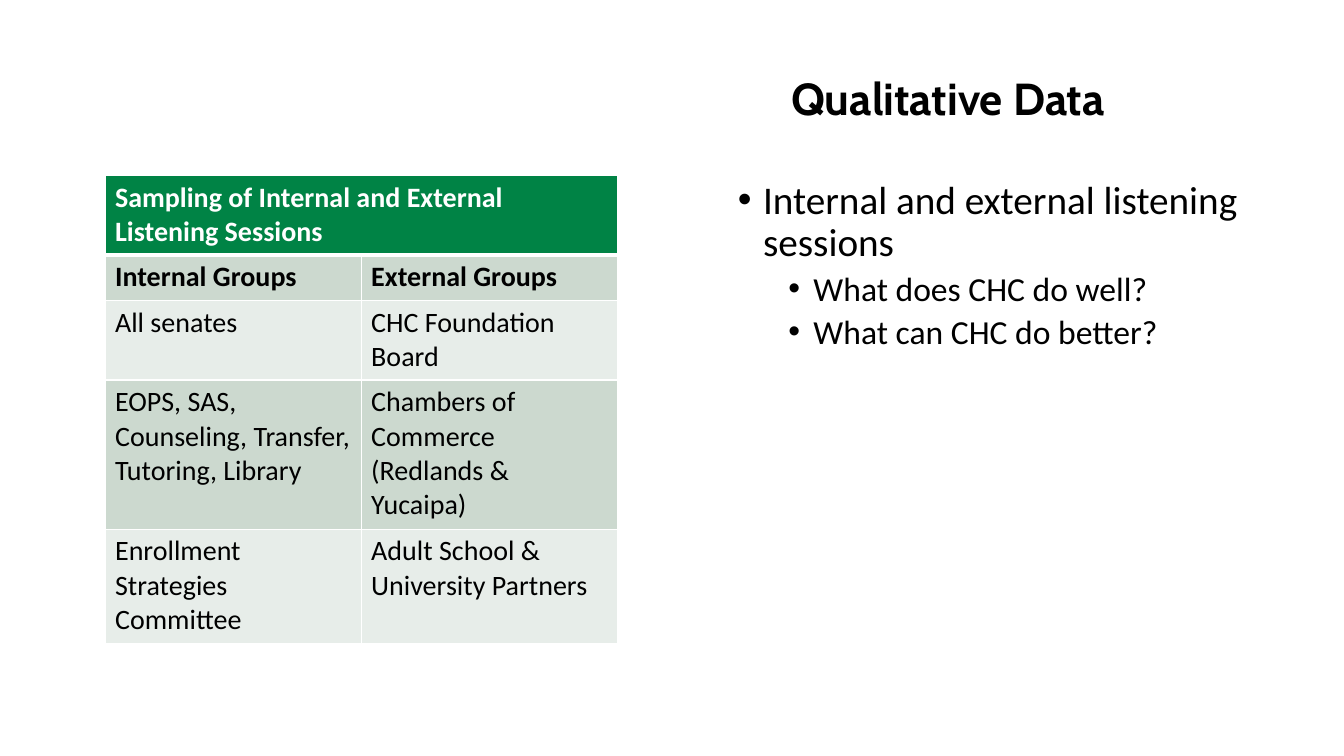
from lxml.etree import SubElement
from pptx import Presentation
from pptx.dml.color import RGBColor
from pptx.enum.text import MSO_ANCHOR
from pptx.oxml.ns import qn
from pptx.util import Pt

BLACK = RGBColor(0x00, 0x00, 0x00)
WHITE = RGBColor(0xFF, 0xFF, 0xFF)
GREEN = RGBColor(0x00, 0x83, 0x45)
DARK_BAND = RGBColor(0xCC, 0xD9, 0xCF)
LIGHT_BAND = RGBColor(0xE7, 0xED, 0xE9)


def set_font(para, name, size, color, bold=False):
    font = para.font
    font.name, font.size, font.bold = name, Pt(size), bold
    font.color.rgb = color


def add_border(cell, side, width):
    line = SubElement(cell._tc.get_or_add_tcPr(), qn(f"a:ln{side}"), w=str(Pt(width)))
    fill = SubElement(line, qn("a:solidFill"))
    SubElement(fill, qn("a:srgbClr"), val=str(WHITE))


deck = Presentation()
deck.slide_width, deck.slide_height = Pt(960), Pt(540)
page = deck.slides.add_slide(deck.slide_layouts[6])

# Title
title = page.shapes.add_textbox(Pt(558), Pt(54), Pt(461.5), Pt(36)).text_frame
title.word_wrap = True
title.vertical_anchor = MSO_ANCHOR.MIDDLE
para = title.paragraphs[0]
para.text = "Qualitative Data"
para.line_spacing = 0.9
set_font(para, "Cabin", 32, BLACK, bold=True)

# Bulleted list: level, size, space before, text
bullets = [
    (0, 28, 0, "Internal and external listening sessions"),
    (1, 24, 5, "What does CHC do well?"),
    (1, 24, 5, "What can CHC do better?"),
]
body = page.shapes.add_textbox(Pt(520), Pt(125.3), Pt(397.5), Pt(342.7)).text_frame
body.word_wrap = True
for index, (level, size, space, text) in enumerate(bullets):
    para = body.add_paragraph() if index else body.paragraphs[0]
    para.text = text
    para.level = level
    para.line_spacing = 0.9
    para.space_before = Pt(space)
    props = para._p.get_or_add_pPr()
    props.set("marL", str(Pt(18 + 36 * level)))
    props.set("indent", str(Pt(-18)))
    SubElement(props, qn("a:buFont"), typeface="Arial")
    SubElement(props, qn("a:buChar"), char="•")
    set_font(para, "Calibri", size, BLACK)

# Listening sessions table
rows = [
    ("Sampling of Internal and External Listening Sessions", ""),
    ("Internal Groups", "External Groups"),
    ("All senates", "CHC Foundation Board"),
    ("EOPS, SAS, Counseling, Transfer, Tutoring, Library",
     "Chambers of Commerce (Redlands & Yucaipa)"),
    ("Enrollment Strategies Committee", "Adult School & University Partners"),
]
row_heights = [56.9, 32.4, 56.9, 106.5, 81.4]
table = page.shapes.add_table(
    len(rows), 2, Pt(75), Pt(125.3), Pt(366), Pt(sum(row_heights))).table
for column in table.columns:
    column.width = Pt(183)
for row_index, (texts, height) in enumerate(zip(rows, row_heights)):
    table.rows[row_index].height = Pt(height)
    band = DARK_BAND if row_index % 2 else LIGHT_BAND
    for column_index, text in enumerate(texts):
        cell = table.cell(row_index, column_index)
        widths = {"L": 1, "R": 1, "T": 3 if row_index == 1 else 1,
                  "B": 3 if row_index == 0 else 1}
        for side, width in widths.items():
            add_border(cell, side, width)
        cell.fill.solid()
        cell.fill.fore_color.rgb = band if row_index else GREEN
        cell.text = text
        set_font(cell.text_frame.paragraphs[0], "Calibri", 20,
                 BLACK if row_index else WHITE, bold=row_index < 2)
table.cell(0, 0).merge(table.cell(0, 1))

deck.save("out.pptx")
